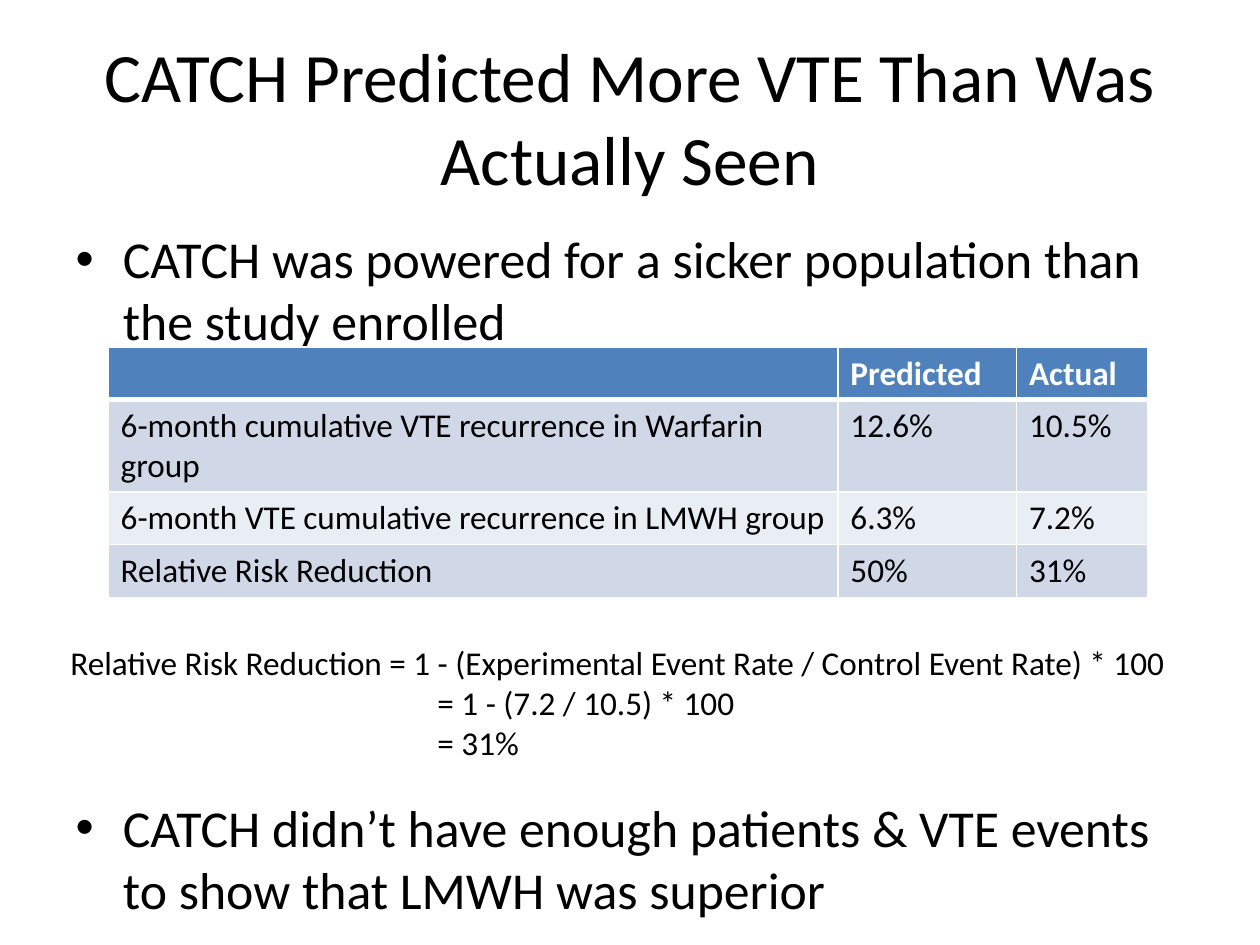
import pptx
import pptx.dml.color
import pptx.enum.text
import pptx.oxml.ns
import pptx.util
from lxml import etree

Cm = pptx.util.Cm
Pt = pptx.util.Pt
RGBColor = pptx.dml.color.RGBColor
Anchor = pptx.enum.text.MSO_ANCHOR
Align = pptx.enum.text.PP_ALIGN

# Content
TITLE = "CATCH Predicted More VTE Than Was Actually Seen"
BULLETS = [
    "CATCH was powered for a sicker population than the study enrolled",
    "CATCH didn’t have enough patients & VTE events to show that LMWH was superior",
]
RATES = [
    ("", "Predicted", "Actual"),
    ("6-month cumulative VTE recurrence in Warfarin group", "12.6%", "10.5%"),
    ("6-month VTE cumulative recurrence in LMWH group", "6.3%", "7.2%"),
    ("Relative Risk Reduction", "50%", "31%"),
]
FORMULA = [
    "Relative Risk Reduction = 1 - (Experimental Event Rate / Control Event Rate) * 100",
    "= 1 - (7.2 / 10.5) * 100",
    "= 31%",
]

# Format
BLACK = RGBColor(0x00, 0x00, 0x00)
WHITE = RGBColor(0xFF, 0xFF, 0xFF)
HEADER_BLUE = RGBColor(0x4F, 0x81, 0xBD)
BANDS = [RGBColor(0xE9, 0xED, 0xF4), RGBColor(0xD0, 0xD8, 0xE8)]
COLUMN_WIDTHS = [14.71, 3.6, 2.64]
ROW_HEIGHTS = [1.04, 1.84, 1.04, 1.04]
BULLET_GAP = 254  # points left free for the table and the formula
EQUALS_INDENT = Cm(7.4)  # lines up the equals signs


def write(frame, text, first=True, size=19, color=BLACK, bold=False,
          align=None, before=None, indent=None):
    """Write one paragraph into a text frame and return nothing."""
    paragraph = frame.paragraphs[0] if first else frame.add_paragraph()
    if align is not None:
        paragraph.alignment = align
    if before is not None:
        paragraph.space_before = Pt(before)
    if indent is not None:
        paragraph._p.get_or_add_pPr().set("marL", str(int(indent)))
    run = paragraph.add_run()
    run.text = text
    run.font.name = "Calibri"
    run.font.size = Pt(size)
    run.font.bold = bold
    run.font.color.rgb = color


def place(shape, left, top, width, height):
    shape.left, shape.top = Cm(left), Cm(top)
    shape.width, shape.height = Cm(width), Cm(height)


def add_borders(cell, bottom):
    """White rules around a cell; they must precede its fill."""
    qn = pptx.oxml.ns.qn
    properties = cell._tc.get_or_add_tcPr()
    for position, (side, width) in enumerate(
            [("lnL", 1), ("lnR", 1), ("lnT", 1), ("lnB", bottom)]):
        line = etree.Element(qn(f"a:{side}"), w=str(int(Pt(width))))
        fill = etree.SubElement(line, qn("a:solidFill"))
        etree.SubElement(fill, qn("a:srgbClr"), val=str(WHITE))
        properties.insert(position, line)


def main():
    deck = pptx.Presentation()
    deck.slide_width, deck.slide_height = Cm(25.4), Cm(19.05)
    slide = deck.slides.add_slide(deck.slide_layouts[1])

    # Title
    title = slide.shapes.title
    place(title, 1.27, 0.76, 22.86, 3.18)
    title.text_frame.auto_size = pptx.enum.text.MSO_AUTO_SIZE.NONE
    title.text_frame.vertical_anchor = Anchor.MIDDLE
    write(title.text_frame, TITLE, size=39.6, align=Align.CENTER)

    # Bullets above and below the table
    findings = slide.placeholders[1]
    place(findings, 1.27, 4.45, 22.86, 13.84)
    findings.text_frame.auto_size = pptx.enum.text.MSO_AUTO_SIZE.NONE
    for i, bullet in enumerate(BULLETS):
        write(findings.text_frame, bullet, first=i == 0, size=29.6,
              before=BULLET_GAP if i else None)

    # Risk reduction formula
    formula = slide.shapes.add_textbox(Cm(1.42), Cm(12.95), Cm(22.71), Cm(2.44))
    frame = formula.text_frame
    frame.word_wrap = True
    frame.margin_left = frame.margin_right = 0
    frame.margin_top = frame.margin_bottom = 0
    for i, step in enumerate(FORMULA):
        write(frame, step, first=i == 0, indent=EQUALS_INDENT if i else None)

    # Predicted and actual rates
    rates = slide.shapes.add_table(
        len(RATES), len(COLUMN_WIDTHS), Cm(2.18), Cm(7.0),
        Cm(sum(COLUMN_WIDTHS)), Cm(sum(ROW_HEIGHTS))).table
    for column, width in zip(rates.columns, COLUMN_WIDTHS):
        column.width = Cm(width)
    for r, (row, height) in enumerate(zip(RATES, ROW_HEIGHTS)):
        rates.rows[r].height = Cm(height)
        header = r == 0
        for c, text in enumerate(row):
            cell = rates.cell(r, c)
            cell.fill.solid()
            cell.fill.fore_color.rgb = HEADER_BLUE if header else BANDS[r % 2]
            add_borders(cell, bottom=3 if header else 1)
            if text:
                write(cell.text_frame, text, bold=header,
                      color=WHITE if header else BLACK)

    deck.save("out.pptx")


if __name__ == "__main__":
    main()
